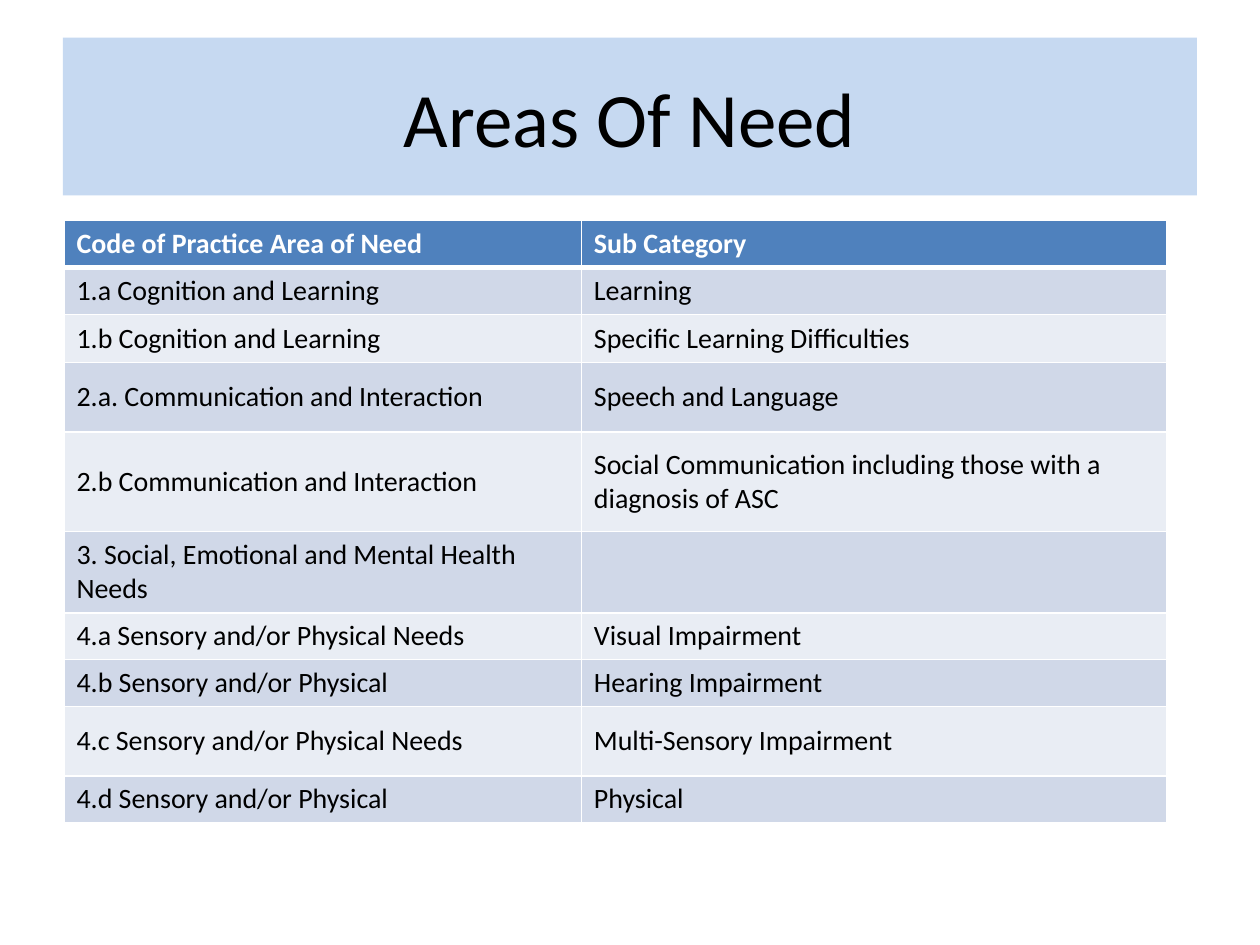
import dataclasses
import typing

import pptx
import pptx.dml.color
import pptx.enum.shapes
import pptx.enum.text
import pptx.oxml.ns
import pptx.slide
import pptx.util
from lxml import etree

Cm = pptx.util.Cm
Pt = pptx.util.Pt
MIDDLE = pptx.enum.text.MSO_ANCHOR.MIDDLE
TOP = pptx.enum.text.MSO_ANCHOR.TOP


@dataclasses.dataclass(frozen=True)
class Theme:
    font: str = "Calibri"
    title_size: int = 44
    table_size: int = 16
    text: str = "000000"
    white: str = "FFFFFF"
    title_fill: str = "C6D9F1"
    header_fill: str = "4F81BD"
    bands: tuple[str, str] = ("D0D8E8", "E9EDF4")
    border: int = 1
    header_border: int = 3


class Row(typing.NamedTuple):
    area: str
    sub_category: str
    height: float


THEME = Theme()
COLUMN_WIDTHS = (10.43, 11.8)
ROWS = [
    Row("Code of Practice Area of Need", "Sub Category", 0.81),
    Row("1.a Cognition and Learning", "Learning", 0.94),
    Row("1.b Cognition and Learning", "Specific Learning Difficulties", 0.97),
    Row("2.a. Communication and Interaction", "Speech and Language", 1.4),
    Row("2.b Communication and Interaction",
        "Social Communication including those with a diagnosis of ASC", 2.01),
    Row("3. Social, Emotional and Mental Health Needs", "", 1.4),
    Row("4.a Sensory and/or Physical Needs", "Visual Impairment", 0.91),
    Row("4.b Sensory and/or Physical", "Hearing Impairment", 0.94),
    Row("4.c Sensory and/or Physical Needs", "Multi-Sensory Impairment", 1.4),
    Row("4.d Sensory and/or Physical", "Physical", 0.91),
]


def set_fill(target: typing.Any, color: str) -> None:
    target.fill.solid()
    target.fill.fore_color.rgb = pptx.dml.color.RGBColor.from_string(color)


def write_text(paragraph: typing.Any, text: str, color: str, size: int,
               bold: bool = False) -> None:
    paragraph.text = text
    formats = {"name": THEME.font, "size": Pt(size), "bold": bold}
    for name, value in formats.items():
        setattr(paragraph.font, name, value)
    paragraph.font.color.rgb = pptx.dml.color.RGBColor.from_string(color)


def set_borders(cell: typing.Any, widths: dict[str, int]) -> None:
    """Draw the cell's edges; python-pptx has no public method for them."""
    qn = pptx.oxml.ns.qn
    properties = cell._tc.get_or_add_tcPr()
    for edge, width in widths.items():
        line = etree.SubElement(properties, qn(f"a:{edge}"), w=str(Pt(width)))
        fill = etree.SubElement(line, qn("a:solidFill"))
        etree.SubElement(fill, qn("a:srgbClr"), val=THEME.white)


def draw_title(slide: pptx.slide.Slide, text: str) -> None:
    shape = slide.shapes.add_shape(
        pptx.enum.shapes.MSO_SHAPE.RECTANGLE,
        Cm(1.27), Cm(0.76), Cm(22.86), Cm(3.18))
    shape.shadow.inherit = False
    set_fill(shape, THEME.title_fill)
    shape.line.fill.background()
    frame = shape.text_frame
    for name, value in {"word_wrap": True, "vertical_anchor": MIDDLE}.items():
        setattr(frame, name, value)
    paragraph = frame.paragraphs[0]
    paragraph.alignment = pptx.enum.text.PP_ALIGN.CENTER
    write_text(paragraph, text, THEME.text, THEME.title_size)


def draw_table(slide: pptx.slide.Slide, rows: list[Row]) -> None:
    table = slide.shapes.add_table(
        len(rows), len(COLUMN_WIDTHS), Cm(1.29), Cm(4.45),
        Cm(sum(COLUMN_WIDTHS)), Cm(sum(row.height for row in rows))).table
    for column, width in zip(table.columns, COLUMN_WIDTHS):
        column.width = Cm(width)

    for index, row in enumerate(rows):
        table.rows[index].height = Cm(row.height)
        header = index == 0
        fill = THEME.header_fill if header else THEME.bands[(index - 1) % 2]
        color = THEME.white if header else THEME.text
        # The thick rule is shared by the header and the first body row
        borders = dict.fromkeys(("lnL", "lnR", "lnT", "lnB"), THEME.border)
        if index < 2:
            borders["lnB" if header else "lnT"] = THEME.header_border
        for column, text in enumerate((row.area, row.sub_category)):
            cell = table.cell(index, column)
            cell.vertical_anchor = TOP if header else MIDDLE
            set_borders(cell, borders)
            set_fill(cell, fill)
            write_text(cell.text_frame.paragraphs[0], text, color,
                       THEME.table_size, header)


def main() -> None:
    presentation = pptx.Presentation()
    presentation.slide_width = Cm(25.4)
    presentation.slide_height = Cm(19.05)
    slide = presentation.slides.add_slide(presentation.slide_layouts[6])

    # Title band
    draw_title(slide, "Areas Of Need")

    # Areas of need with their sub categories
    draw_table(slide, ROWS)

    presentation.save("out.pptx")


if __name__ == "__main__":
    main()
